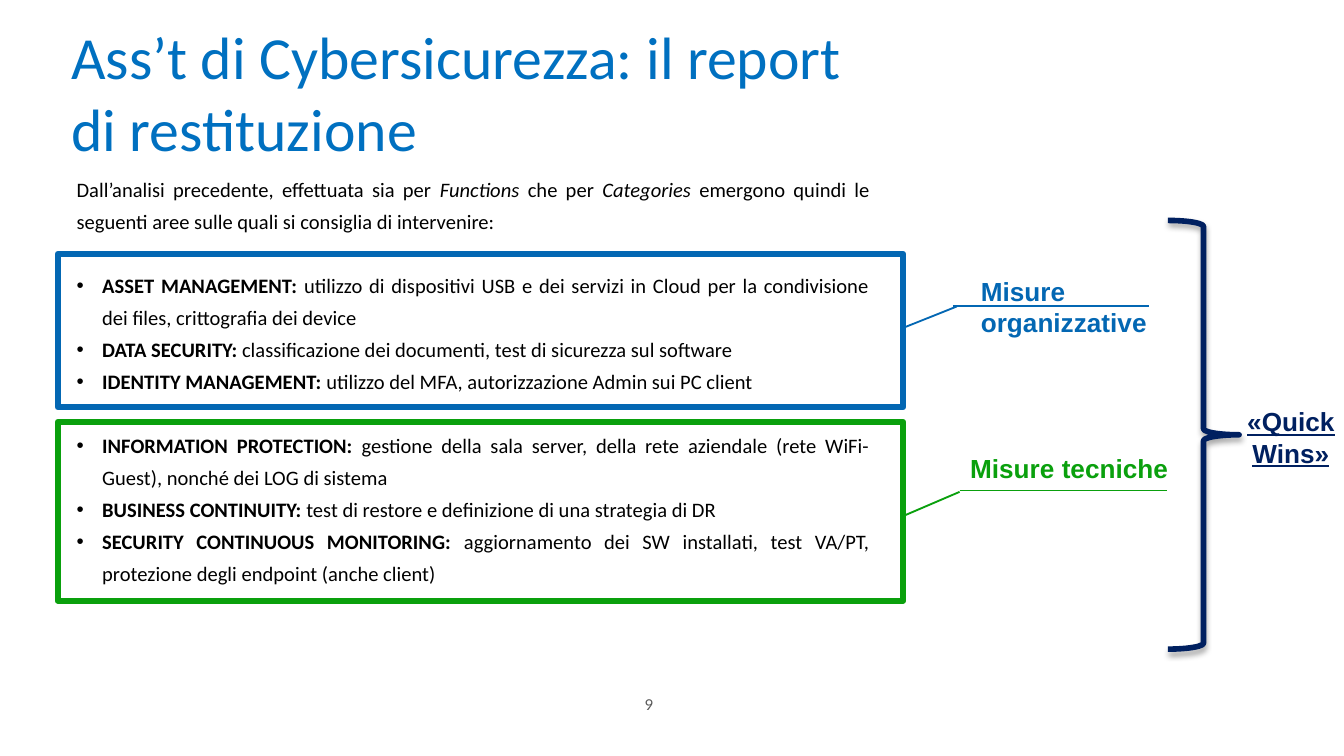
from lxml.etree import SubElement
from pptx import Presentation
from pptx.dml.color import RGBColor
from pptx.enum.shapes import MSO_CONNECTOR, MSO_SHAPE
from pptx.enum.text import MSO_ANCHOR, MSO_AUTO_SIZE, PP_ALIGN
from pptx.oxml.ns import qn
from pptx.util import Inches, Pt

LINE = MSO_CONNECTOR.STRAIGHT
RECT, BRACE = MSO_SHAPE.RECTANGLE, MSO_SHAPE.RIGHT_BRACE
TOP, MIDDLE = MSO_ANCHOR.TOP, MSO_ANCHOR.MIDDLE
LEFT, CENTER, JUSTIFY = PP_ALIGN.LEFT, PP_ALIGN.CENTER, PP_ALIGN.JUSTIFY
FIXED = MSO_AUTO_SIZE.NONE
BLUE, GREEN, NAVY, BLACK = "0367B3", "0AA00D", "002060", "000000"
WIDTH = 10
HEIGHT = WIDTH * 9 / 16

TITLE = "Ass’t di Cybersicurezza: il report di restituzione"
INTRO = [
    ("Dall’analisi precedente, effettuata sia per ", False),
    ("Functions", True),
    (" che per ", False),
    ("Categories ", True),
    ("emergono quindi le seguenti aree sulle quali si consiglia di intervenire:", False),
]
AREAS = [
    [
        ("ASSET MANAGEMENT:", "utilizzo di dispositivi USB e dei servizi in Cloud "
         "per la condivisione dei files, crittografia dei device"),
        ("DATA SECURITY:", "classificazione dei documenti, test di sicurezza sul software"),
        ("IDENTITY MANAGEMENT:", "utilizzo del MFA, autorizzazione Admin sui PC client"),
    ],
    [
        ("INFORMATION PROTECTION:", "gestione della sala server, della rete aziendale "
         "(rete WiFi-Guest), nonché dei LOG di sistema"),
        ("BUSINESS CONTINUITY:", "test di restore e definizione di una strategia di DR"),
        ("SECURITY CONTINUOUS MONITORING:", "aggiornamento dei SW installati, test VA/PT, "
         "protezione degli endpoint (anche client)"),
    ],
]
FRAMES = [
    {"color": BLUE, "box": (0.43, 1.89, 6.29, 1.14), "label": "Misure organizzative",
     "at": (7.2, 2, 1.76, 0.57), "lead": (6.72, 2.44, 7.12, 2.28),
     "rule": (7.09, 2.28, 8.55, 2.28)},
    {"color": GREEN, "box": (0.43, 3.14, 6.29, 1.33), "label": "Misure tecniche",
     "at": (7.12, 3.32, 1.82, 0.34), "lead": (6.72, 3.84, 7.14, 3.66),
     "rule": (7.14, 3.65, 8.68, 3.65)},
]


def paint(target, color):
    target.rgb = RGBColor.from_string(color)


def style(para, name, size, color, align=LEFT, bold=None):
    font = para.font
    font.name, font.size, font.bold = name, Pt(size), bold
    paint(font.color, color)
    para.alignment = align


def place(shape, box):
    shape.left, shape.top, shape.width, shape.height = map(Inches, box)


def setup(frame, anchor, inset=None):
    frame.word_wrap, frame.auto_size = True, FIXED
    frame.vertical_anchor = anchor
    if inset is not None:
        frame.margin_left = frame.margin_right = Inches(inset)
        frame.margin_top = frame.margin_bottom = Inches(inset)


def add_label(slide, text, box, color, align=LEFT, name="Arial", size=14,
              bold=True, anchor=TOP, inset=None):
    frame = slide.shapes.add_textbox(*map(Inches, box)).text_frame
    setup(frame, anchor, inset)
    para = frame.paragraphs[0]
    para.text = text
    style(para, name, size, color, align, bold)
    return para


def add_line(slide, ends, color):
    line = slide.shapes.add_connector(LINE, *map(Inches, ends))
    paint(line.line.color, color)
    line.line.width = Pt(1)
    SubElement(line._element.spPr, qn("a:effectLst"))


def add_shape(slide, kind, box, color, width):
    shape = slide.shapes.add_shape(kind, *map(Inches, box))
    shape.shadow.inherit = False
    shape.fill.background()
    paint(shape.line.color, color)
    shape.line.width = Pt(width)
    return shape


def add_shadow(shape):
    effects = shape._element.spPr.find(qn("a:effectLst"))
    shadow = SubElement(effects, qn("a:outerShdw"), blurRad=str(Pt(3.1)),
                        dist=str(Pt(1.8)), dir="5400000", rotWithShape="0")
    color = SubElement(shadow, qn("a:srgbClr"), val=BLACK)
    SubElement(color, qn("a:alpha"), val="35000")


def format_body(para, gap, bullet):
    props = para._p.get_or_add_pPr()
    indent = Inches(0.19) if bullet else 0
    props.set("marL", str(indent))
    props.set("indent", str(-indent))
    if bullet:
        tint = SubElement(props, qn("a:buClr"))
        SubElement(tint, qn("a:srgbClr"), val=BLACK)
        SubElement(props, qn("a:buFont"), typeface="Arial")
        SubElement(props, qn("a:buChar"), char="•")
    else:
        SubElement(props, qn("a:buNone"))
    para.line_spacing = 1.3
    para.space_before, para.space_after = Pt(gap), Pt(0)
    style(para, "Calibri", 11, BLACK, JUSTIFY)


def fill_body(frame):
    setup(frame, TOP, 0)
    para = frame.paragraphs[0]
    format_body(para, 0, False)
    for text, italic in INTRO:
        run = para.add_run()
        run.text, run.font.italic = text, italic
    for area in AREAS:
        for row, (head, text) in enumerate(area):
            para = frame.add_paragraph()
            format_body(para, 0 if row else 17.2, True)
            run = para.add_run()
            run.text, run.font.bold = head + " ", True
            para.add_run().text = text


def main():
    """Build the slide on the assessment report and save it."""
    deck = Presentation()
    deck.slide_width, deck.slide_height = Inches(WIDTH), Inches(HEIGHT)
    slide = deck.slides.add_slide(deck.slide_layouts[1])
    title, body = slide.placeholders
    place(title, (0.53, 0.15, 6.05, 1.08))
    setup(title.text_frame, TOP, 0)
    title.text_frame.text = TITLE
    style(title.text_frame.paragraphs[0], "Calibri", 32, "0070C0")
    place(body, (0.57, 1.26, 5.9, 3.29))
    fill_body(body.text_frame)
    for item in FRAMES:
        color = item["color"]
        add_shape(slide, RECT, item["box"], color, 3.25)
        add_label(slide, item["label"], item["at"], color)
        for part in ("lead", "rule"):
            add_line(slide, item[part], color)
    add_shadow(add_shape(slide, BRACE, (8.69, 1.64, 0.53, 3.19), NAVY, 3))
    wins = add_label(slide, "«Quick Wins»", (8.98, 2.97, 1.25, 0.57), NAVY, CENTER)
    wins.font.underline = True
    add_label(slide, "9", (4.53, 5.03, 0.6, 0.43), "595959", CENTER,
              "Lato", 8, False, MIDDLE, 0.1)
    deck.save("out.pptx")


if __name__ == "__main__":
    main()
